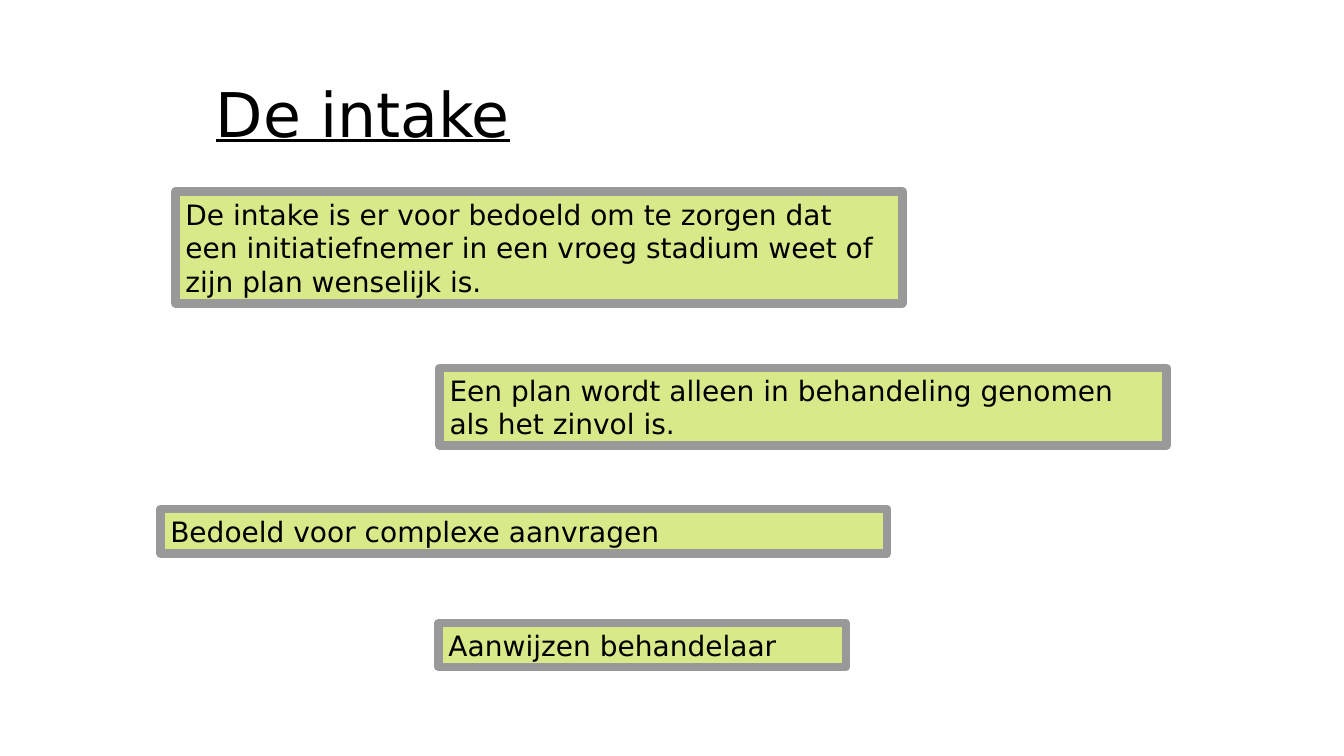
from dataclasses import dataclass

from pptx import Presentation
from pptx.dml.color import RGBColor
from pptx.enum.shapes import MSO_SHAPE
from pptx.enum.text import MSO_ANCHOR, PP_ALIGN
from pptx.slide import Slide
from pptx.text.text import TextFrame
from pptx.util import Inches, Pt

RECTANGLE = MSO_SHAPE.RECTANGLE
MIDDLE = MSO_ANCHOR.MIDDLE
LEFT = PP_ALIGN.LEFT


@dataclass(frozen=True)
class Theme:
    font: str = "DejaVu Sans"
    text: RGBColor = RGBColor(0x00, 0x00, 0x00)
    fill: RGBColor = RGBColor(0xD8, 0xE9, 0x89)
    border: RGBColor = RGBColor(0x99, 0x99, 0x99)
    border_width: Pt = Pt(6)
    title_size: Pt = Pt(44)
    body_size: Pt = Pt(20)


@dataclass(frozen=True)
class Statement:
    text: str
    left: float
    top: float
    width: float
    height: float


THEME = Theme()
TITLE = Statement("De intake", 2.04, 0.7, 9.86, 0.84)
STATEMENTS = (
    Statement(
        "De intake is er voor bedoeld om te zorgen dat een initiatiefnemer "
        "in een vroeg stadium weet of zijn plan wenselijk is.",
        1.74, 1.9, 7.21, 1.11,
    ),
    Statement(
        "Een plan wordt alleen in behandeling genomen als het zinvol is.",
        4.36, 3.65, 7.21, 0.77,
    ),
    Statement("Bedoeld voor complexe aanvragen", 1.59, 5.05, 7.21, 0.44),
    Statement("Aanwijzen behandelaar", 4.35, 6.18, 4.04, 0.44),
)


def write_text(text_frame: TextFrame, text: str, size: Pt, underline: bool = False) -> None:
    text_frame.text = text
    text_frame.word_wrap = True
    text_frame.vertical_anchor = MIDDLE
    paragraph = text_frame.paragraphs[0]
    paragraph.alignment = LEFT
    font = paragraph.runs[0].font
    font.name = THEME.font
    font.size = size
    font.underline = underline
    font.color.rgb = THEME.text


def bounds(statement: Statement) -> tuple[Inches, Inches, Inches, Inches]:
    return (
        Inches(statement.left),
        Inches(statement.top),
        Inches(statement.width),
        Inches(statement.height),
    )


def add_title(slide: Slide, title: Statement) -> None:
    shape = slide.shapes.add_textbox(*bounds(title))
    write_text(shape.text_frame, title.text, THEME.title_size, underline=True)


def add_statement(slide: Slide, statement: Statement) -> None:
    shape = slide.shapes.add_shape(RECTANGLE, *bounds(statement))
    shape.shadow.inherit = False
    shape.fill.solid()
    shape.fill.fore_color.rgb = THEME.fill
    shape.line.color.rgb = THEME.border
    shape.line.width = THEME.border_width
    write_text(shape.text_frame, statement.text, THEME.body_size)


def main() -> None:
    """Build the intake slide and save it."""
    presentation = Presentation()
    presentation.slide_width = Inches(13.33)
    presentation.slide_height = Inches(7.5)
    slide = presentation.slides.add_slide(presentation.slide_layouts[6])
    add_title(slide, TITLE)
    for statement in STATEMENTS:
        add_statement(slide, statement)
    presentation.save("out.pptx")


if __name__ == "__main__":
    main()
